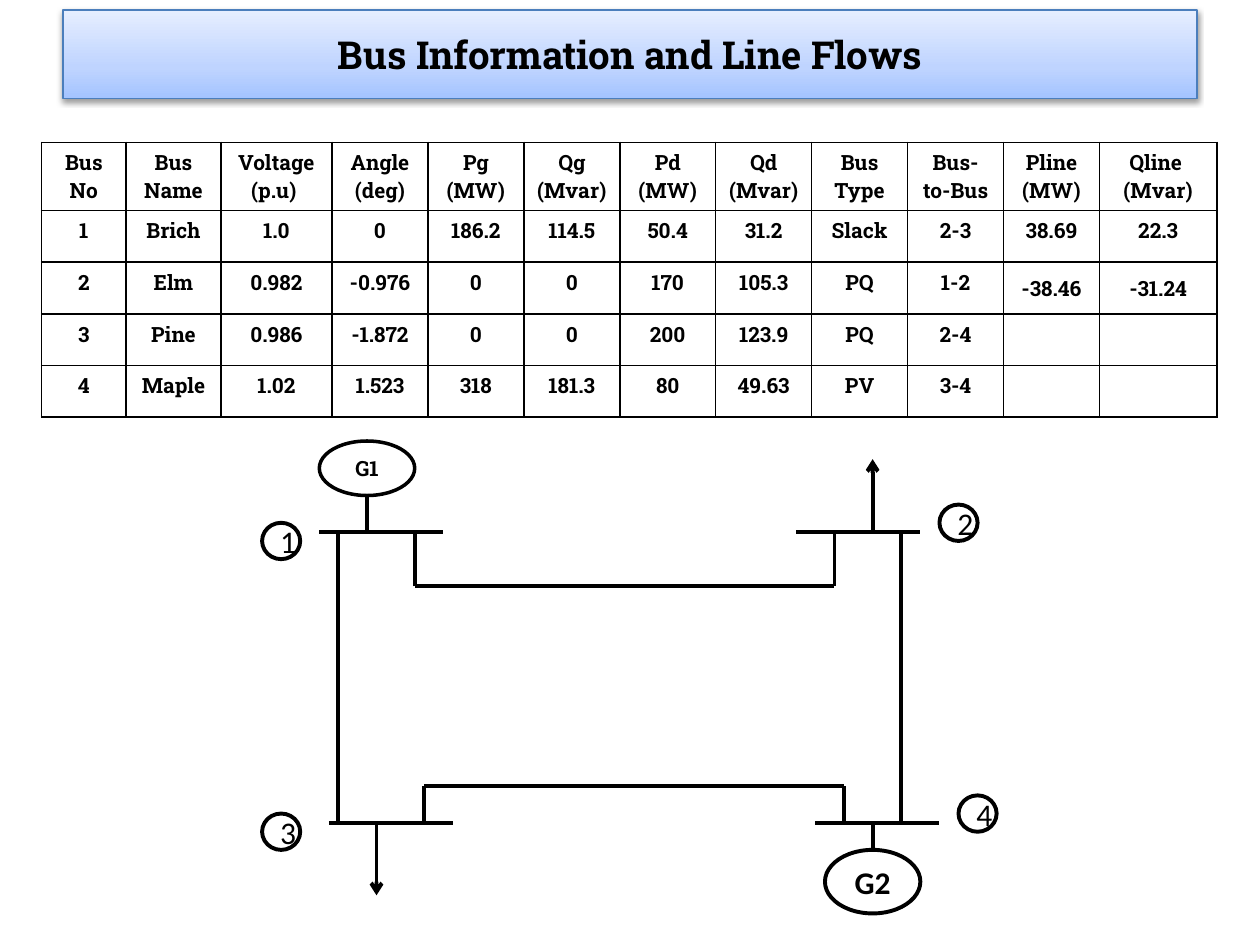
import pptx
import pptx.util
import pptx.dml.color
import pptx.enum.shapes
import pptx.enum.text
import pptx.oxml
from pptx.oxml.ns import nsdecls, qn

Inches, Pt = pptx.util.Inches, pptx.util.Pt
RGBColor = pptx.dml.color.RGBColor
ANCHOR = pptx.enum.text.MSO_ANCHOR
CENTER = pptx.enum.text.PP_ALIGN.CENTER

BLACK = RGBColor(0x00, 0x00, 0x00)
WHITE = RGBColor(0xFF, 0xFF, 0xFF)
TITLE_EDGE = RGBColor(0x4B, 0x7E, 0xBC)
TITLE_STOPS = [(0, RGBColor(0xA4, 0xC4, 0xFF)), (35, RGBColor(0xBF, 0xD4, 0xFF)),
               (100, RGBColor(0xE6, 0xEE, 0xFF))]

SLIDE_W, SLIDE_H = Inches(10), Inches(7.5)
TITLE_FONT = {"name": "Roboto Slab", "size": Pt(22), "bold": True}
TABLE_FONT = {"name": "Roboto Slab", "size": Pt(12), "bold": True}
G2_FONT = {"name": "Calibri", "size": Pt(18), "bold": True}
NUMBER_FONT = {"name": "Calibri", "size": Pt(18), "bold": False}

COLUMN_WIDTHS = [0.67, 0.75, 0.88] + [0.76] * 8 + [0.93]
BUS_ROWS = [
    ["Bus No", "Bus Name", "Voltage (p.u) ", "Angle (deg)", "Pg (MW)", "Qg (Mvar)",
     "Pd (MW)", "Qd (Mvar)", "Bus Type", "Bus-to-Bus", "Pline (MW)", "Qline  (Mvar)"],
    ["1", "Brich", "1.0", "0", "186.2", "114.5", "50.4", "31.2", "Slack", "2-3", "38.69", "22.3"],
    ["2", "Elm", "0.982", "-0.976", "0", "0", "170", "105.3", "PQ", "1-2", "-38.46", "-31.24"],
    ["3", "Pine", "0.986", "-1.872", "0", "0", "200", "123.9", "PQ", "2-4", "", ""],
    ["4", "Maple", "1.02", "1.523", "318", "181.3", "80", "49.63", "PV", "3-4", "", ""],
]

# One-line diagram on a grid of 77 columns by 52 rows
GRID_COLS, GRID_ROWS = 77, 52
BUSES = [(6, 10), (7, 42), (56, 10), (58, 42)]  # left end of each bus bar
BUS_LENGTH = 13
LINES = [
    (16, 16, 60, 16), (17, 38, 61, 38),                        # horizontal runs
    (8, 10, 8, 42), (67, 10, 67, 42),                          # vertical runs
    (16, 16, 16, 10), (60, 16, 60, 10),                        # taps on the upper buses
    (17, 42, 17, 38), (61, 42, 61, 38),                        # taps on the lower buses
    (11, 6, 11, 10), (64, 42, 64, 45),                         # generator stems
]
LOADS = [(64, 10, 64, 2), (12, 42, 12, 50)]
GENERATORS = [("G1", 6, 0, 10, 6, 2, TABLE_FONT), ("G2", 59, 45, 10, 7, 2.25, G2_FONT)]
BUS_NUMBERS = [("1", 0, 9), ("2", 71, 7), ("3", 0, 41), ("4", 73, 39)]


def write(frame, text, font):
    paragraph = frame.paragraphs[0]
    paragraph.alignment = CENTER
    run = paragraph.add_run()
    run.text = text
    run.font.color.rgb = BLACK
    for key, value in font.items():
        setattr(run.font, key, value)


def add_title(slide, left, top, width, height):
    title = slide.shapes.title
    title.left, title.top, title.width, title.height = left, top, width, height
    stops = "".join(f'<a:gs pos="{share * 1000}"><a:srgbClr val="{color}"/></a:gs>'
                    for share, color in TITLE_STOPS)
    properties = title._element.spPr
    properties.append(pptx.oxml.parse_xml(
        f'<a:gradFill {nsdecls("a")} rotWithShape="1"><a:gsLst>{stops}</a:gsLst>'
        '<a:lin ang="16200000" scaled="0"/></a:gradFill>'))
    title.line.color.rgb = TITLE_EDGE
    title.line.width = Pt(0.75)
    properties.append(pptx.oxml.parse_xml(
        f'<a:effectLst {nsdecls("a")}><a:outerShdw blurRad="{Pt(3.1)}" dist="{Pt(1.6)}" '
        'dir="5400000" rotWithShape="0"><a:srgbClr val="000000"><a:alpha val="38000"/>'
        '</a:srgbClr></a:outerShdw></a:effectLst>'))
    title.text_frame.vertical_anchor = ANCHOR.MIDDLE
    write(title.text_frame, "Bus Information and Line Flows", TITLE_FONT)


def set_borders(cell):
    properties = cell._tc.get_or_add_tcPr()
    for position, side in enumerate(("lnL", "lnR", "lnT", "lnB")):
        properties.insert(position, pptx.oxml.parse_xml(
            f'<a:{side} {nsdecls("a")} w="{Pt(1)}"><a:solidFill>'
            f'<a:srgbClr val="{BLACK}"/></a:solidFill></a:{side}>'))


def add_bus_table(slide, left, top, width, height):
    table = slide.shapes.add_table(len(BUS_ROWS), len(COLUMN_WIDTHS),
                                   left, top, width, height).table
    for column, share in zip(table.columns, COLUMN_WIDTHS):
        column.width = int(width * share / sum(COLUMN_WIDTHS))
    for r, bus_row in enumerate(BUS_ROWS):
        for c, value in enumerate(bus_row):
            cell = table.cell(r, c)
            cell.fill.background()
            set_borders(cell)
            if value:
                write(cell.text_frame, value, TABLE_FONT)
            # The flows of the second bus sit in the middle of their cells
            if r == 2 and c >= 10:
                cell.vertical_anchor = ANCHOR.MIDDLE


def add_diagram(slide, left, top, width, height):
    def x(col):
        return int(left + width * col / GRID_COLS)

    def y(row):
        return int(top + height * row / GRID_ROWS)

    def add_wire(x1, y1, x2, y2, arrow=False):
        wire = slide.shapes.add_connector(pptx.enum.shapes.MSO_CONNECTOR.STRAIGHT,
                                          x(x1), y(y1), x(x2), y(y2))
        wire.line.color.rgb = BLACK
        wire.line.width = Pt(2.25)
        if arrow:
            wire.line._get_or_add_ln().append(
                pptx.oxml.parse_xml(f'<a:tailEnd {nsdecls("a")} type="arrow"/>'))
        wire._element.spPr.append(wire._element.makeelement(qn("a:effectLst"), {}))

    def add_node(label, col, row, cols, rows, weight, font):
        node = slide.shapes.add_shape(pptx.enum.shapes.MSO_SHAPE.OVAL, x(col), y(row),
                                      x(col + cols) - x(col), y(row + rows) - y(row))
        node.shadow.inherit = False
        node.fill.solid()
        node.fill.fore_color.rgb = WHITE
        node.line.color.rgb = BLACK
        node.line.width = Pt(weight)
        node.text_frame.vertical_anchor = ANCHOR.MIDDLE
        write(node.text_frame, label, font)

    # Bus bars, transmission lines and loads
    for col, row in BUSES:
        add_wire(col, row, col + BUS_LENGTH, row)
    for ends in LINES:
        add_wire(*ends)
    for ends in LOADS:
        add_wire(*ends, arrow=True)

    # Generators and bus numbers
    for generator in GENERATORS:
        add_node(*generator)
    for number, col, row in BUS_NUMBERS:
        add_node(number, col, row, 4, 4, 2.25, NUMBER_FONT)


def main():
    deck = pptx.Presentation()
    deck.slide_width, deck.slide_height = SLIDE_W, SLIDE_H
    slide = deck.slides.add_slide(deck.slide_layouts[5])
    add_title(slide, Inches(0.5), Inches(0.08), Inches(9), Inches(0.7))
    add_bus_table(slide, Inches(0.33), Inches(1.13), Inches(9.33), Inches(2.05))
    add_diagram(slide, Inches(2.08), Inches(3.5), Inches(5.83), Inches(3.75))
    deck.save("out.pptx")


if __name__ == "__main__":
    main()
